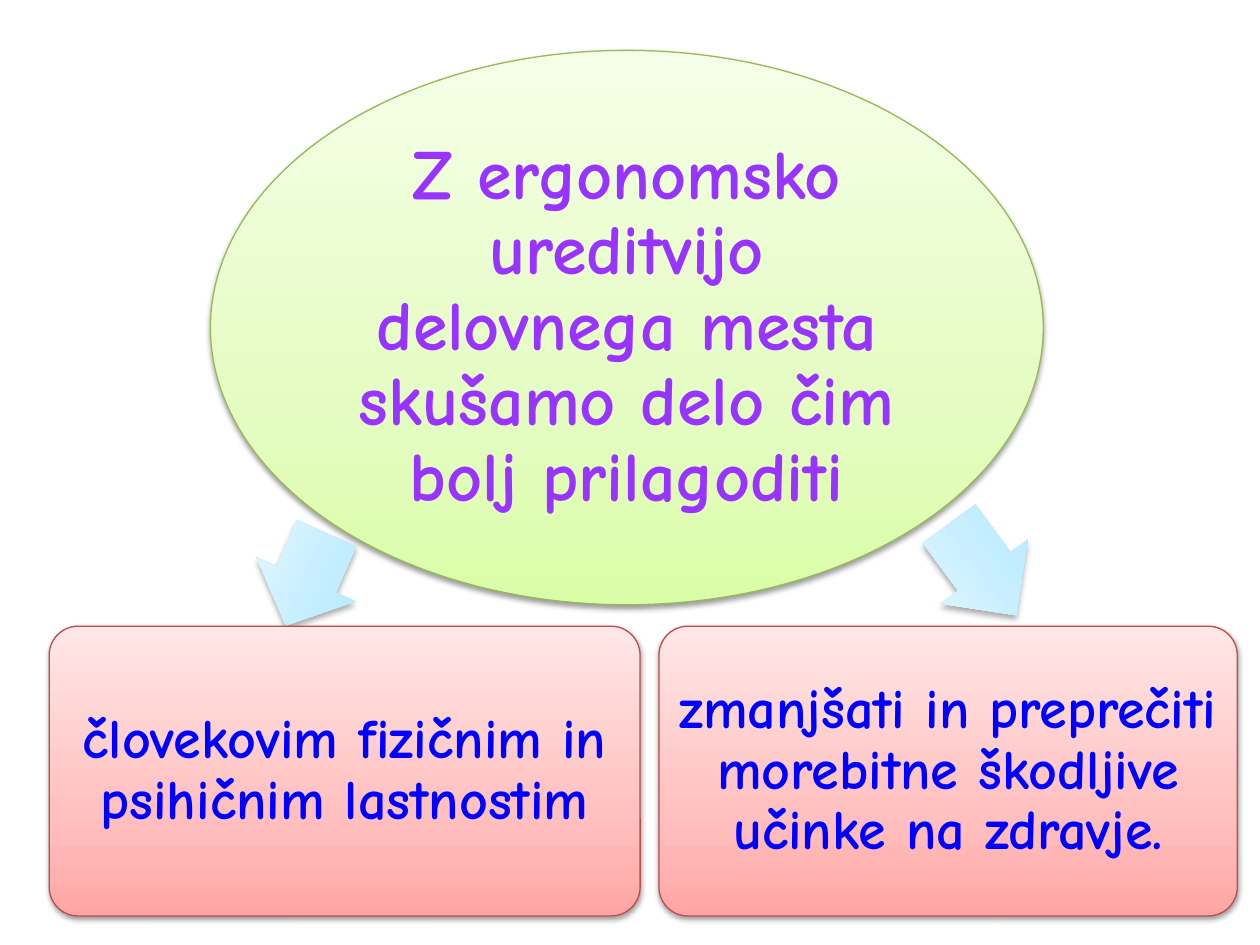
import copy
import pptx
import pptx.util
import pptx.dml.color
import pptx.enum.shapes
import pptx.enum.text
import pptx.oxml

RGB = pptx.dml.color.RGBColor.from_string
KIND = pptx.enum.shapes.MSO_SHAPE
NS = 'xmlns:a="http://schemas.openxmlformats.org/drawingml/2006/main"'

# Theme: gradients run from the bottom edge up
theme = {
    "font": "Comic Neue",
    "big": 40, "mid": 32,
    "violet": "9933FF", "blue": "0000FF",
    "green": ("DAFDA7", "E4FCC2", "F5FFE7"), "moss": "98B955",
    "red": ("FFA6A5", "FFC0BF", "FFE7E7"), "brick": "BF4C48",
    "sky": ("A7E6FF", "C1EDFF", "E7F8FF"),
}

deck = pptx.Presentation()
deck.slide_width = pptx.util.Inches(10)
deck.slide_height = pptx.util.Inches(7.5)
slide = deck.slides.add_slide(deck.slide_layouts[6])

# Grid of 100 columns by 75 rows
col = deck.slide_width / 100
row = deck.slide_height / 75


def draw(kind, box, grad, line=None, blur=3.1, dist=1.6, alpha=38):
    x, y, w, h = box
    shape = slide.shapes.add_shape(
        kind, round(x * col), round(y * row), round(w * col), round(h * row))

    # Three-stop gradient
    shape.fill.gradient()
    shape.fill.gradient_angle = 90
    stops = shape.fill.gradient_stops
    last = stops[1]._gs
    last.addprevious(copy.deepcopy(last))
    for stop, hue, pos in zip(shape.fill.gradient_stops, grad, (0, 0.35, 1)):
        stop.color.rgb = RGB(hue)
        stop.position = pos

    # Outline
    if line:
        shape.line.color.rgb = RGB(line)
        shape.line.width = pptx.util.Pt(0.75)
    else:
        shape.line.fill.background()

    # Soft shadow straight below
    shape.shadow.inherit = False
    shape._element.spPr.find(pptx.oxml.ns.qn("a:effectLst")).append(
        pptx.oxml.parse_xml(
            f'<a:outerShdw {NS} blurRad="{pptx.util.Pt(blur)}" '
            f'dist="{pptx.util.Pt(dist)}" dir="5400000" rotWithShape="0">'
            f'<a:srgbClr val="000000"><a:alpha val="{alpha * 1000}"/>'
            f'</a:srgbClr></a:outerShdw>'))
    return shape


def write(shape, text, size, color, inset):
    frame = shape.text_frame
    frame.word_wrap = True
    frame.vertical_anchor = pptx.enum.text.MSO_ANCHOR.MIDDLE
    frame.margin_left = frame.margin_right = pptx.util.Inches(inset)
    frame.margin_top = frame.margin_bottom = pptx.util.Inches(inset)
    para = frame.paragraphs[0]
    para.alignment = pptx.enum.text.PP_ALIGN.CENTER
    para.line_spacing = 0.9
    para.space_after = pptx.util.Pt(size * 0.35)
    run = para.add_run()
    run.text = text
    run.font.name = theme["font"]
    run.font.size = pptx.util.Pt(size)
    run.font.bold = True
    run.font.color.rgb = RGB(color)


# Main idea
oval = draw(KIND.OVAL, (16.7, 4, 66.1, 44), theme["green"], theme["moss"])
write(oval, "Z ergonomsko ureditvijo delovnega mesta skušamo delo čim bolj "
      "prilagoditi", size=theme["big"], color=theme["violet"], inset=0.03)

# Each goal: its arrow, then its card
goals = [
    ((20.3, 41.7, 8, 8.6), 293.9, 3.9, 46.9,
     "človekovim fizičnim in psihičnim lastnostim"),
    ((73.5, 40.9, 9, 8.6), 233.7, 52.3, 45.9,
     "zmanjšati in preprečiti morebitne škodljive učinke na zdravje."),
]
for box, turn, left, wide, text in goals:
    arrow = draw(KIND.LEFT_ARROW, box, theme["sky"],
                 blur=3.5, dist=2.2, alpha=32)
    arrow.adjustments[0] = 0.6
    arrow.adjustments[1] = 0.5
    arrow.rotation = turn

    card = draw(KIND.ROUNDED_RECTANGLE, (left, 49.7, wide, 23),
                theme["red"], theme["brick"])
    card.adjustments[0] = 0.1
    write(card, text, size=theme["mid"], color=theme["blue"], inset=0.07)

deck.save("out.pptx")
